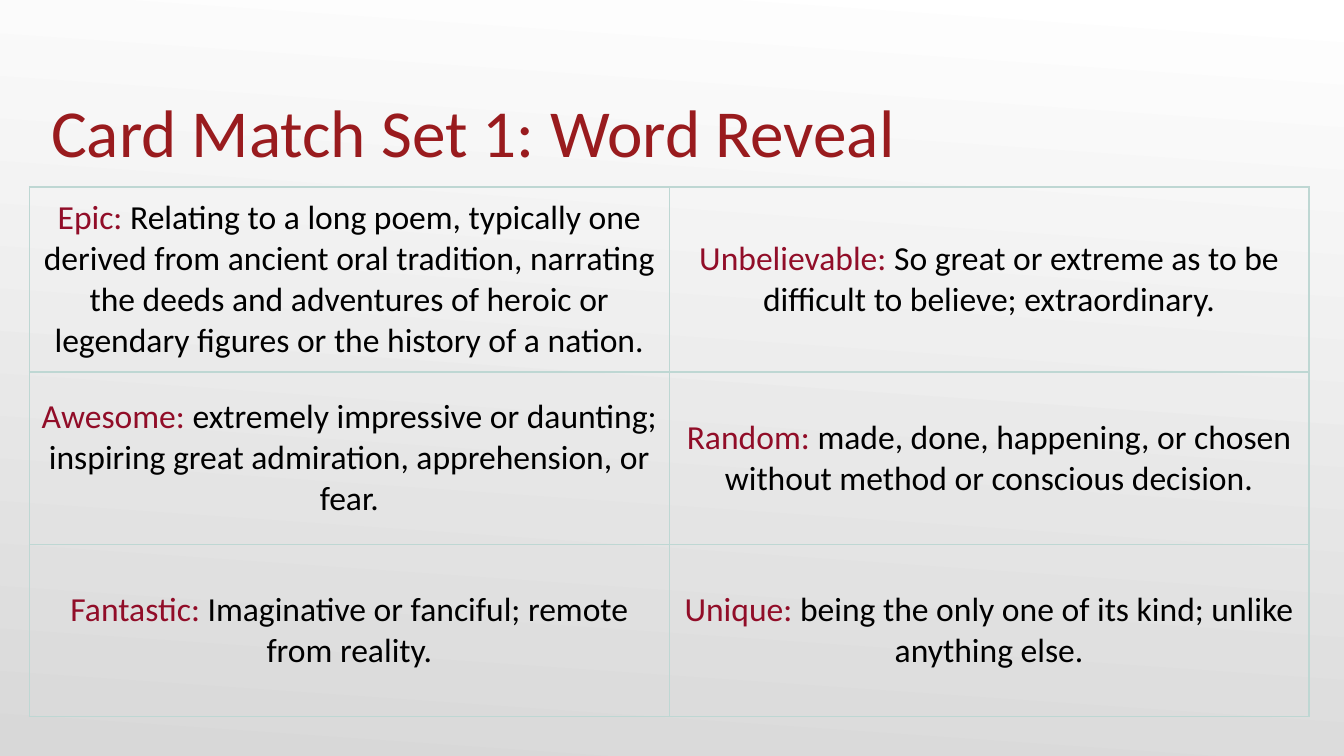
from dataclasses import dataclass

from lxml.etree import SubElement
from pptx import Presentation
from pptx.dml.color import RGBColor
from pptx.enum.text import MSO_ANCHOR, PP_ALIGN
from pptx.oxml.ns import qn
from pptx.util import Inches, Pt


@dataclass(frozen=True)
class Theme:
    font: str = "Calibri"
    title_size: int = 36
    body_size: int = 18
    title: str = "991B1E"
    term: str = "910D28"
    text: str = "000000"
    border: str = "BED7D3"
    border_width: int = 1
    bg_top: str = "FFFFFF"
    bg_bottom: str = "D8D8D8"


THEME = Theme()

# Each card is a term and its definition
CARDS = [
    [("Epic: ", "Relating to a long poem, typically one derived from ancient oral "
      "tradition, narrating the deeds and adventures of heroic or legendary "
      "figures or the history of a nation."),
     ("Unbelievable: ", "So great or extreme as to be difficult to believe; "
      "extraordinary.")],
    [("Awesome: ", "extremely impressive or daunting; inspiring great admiration, "
      "apprehension, or fear."),
     ("Random: ", "made, done, happening, or chosen without method or conscious "
      "decision.")],
    [("Fantastic: ", "Imaginative or fanciful; remote from reality."),
     ("Unique:", " being the only one of its kind; unlike anything else.")],
]
ROW_HEIGHTS = [1.38, 1.28, 1.28]
COL_WIDTH = 4.76


def add_run(p, text, *, size=THEME.body_size, color=THEME.text):
    r = p.add_run()
    r.text = text
    r.font.name = THEME.font
    r.font.size = Pt(size)
    r.font.color.rgb = RGBColor.from_string(color)


def set_background(s):
    fill = s.background.fill
    fill.gradient()
    fill.gradient_angle = 266
    for stop, color in zip(fill.gradient_stops, (THEME.bg_top, THEME.bg_bottom)):
        stop.color.rgb = RGBColor.from_string(color)


def add_title(s, text):
    sp = s.shapes.add_textbox(Inches(0.38), Inches(0.33), Inches(9), Inches(0.94))
    tf = sp.text_frame
    tf.word_wrap = True
    tf.vertical_anchor = MSO_ANCHOR.BOTTOM
    tf.margin_left = tf.margin_right = tf.margin_bottom = 0
    tf.margin_top = Inches(0.05)
    add_run(tf.paragraphs[0], text, size=THEME.title_size, color=THEME.title)


def set_borders(cell):
    tc_pr = cell._tc.get_or_add_tcPr()
    for side in ("a:lnL", "a:lnR", "a:lnT", "a:lnB"):
        ln = SubElement(tc_pr, qn(side), w=str(Pt(THEME.border_width)))
        solid = SubElement(ln, qn("a:solidFill"))
        SubElement(solid, qn("a:srgbClr"), val=THEME.border)


def fill_card(cell, term, definition):
    set_borders(cell)
    cell.fill.background()
    cell.vertical_anchor = MSO_ANCHOR.MIDDLE
    cell.margin_left = cell.margin_right = Inches(0.08)
    cell.margin_top = cell.margin_bottom = Inches(0.08)
    p = cell.text_frame.paragraphs[0]
    p.alignment = PP_ALIGN.CENTER
    add_run(p, term, color=THEME.term)
    add_run(p, definition)


def add_cards(s, cards):
    n_cols = len(cards[0])
    table = s.shapes.add_table(
        len(cards), n_cols, Inches(0.22), Inches(1.39),
        Inches(COL_WIDTH * n_cols), Inches(sum(ROW_HEIGHTS))).table
    table.first_row = table.horz_banding = False
    for col in table.columns:
        col.width = Inches(COL_WIDTH)
    for i, (height, row) in enumerate(zip(ROW_HEIGHTS, cards)):
        table.rows[i].height = Inches(height)
        for j, (term, definition) in enumerate(row):
            fill_card(table.cell(i, j), term, definition)


def main():
    # Widescreen 16:9 page
    prs = Presentation()
    prs.slide_width, prs.slide_height = Inches(10), Inches(10 * 9 / 16)
    s = prs.slides.add_slide(prs.slide_layouts[6])

    # Backdrop, heading and card grid
    set_background(s)
    add_title(s, "Card Match Set 1: Word Reveal")
    add_cards(s, CARDS)

    prs.save("out.pptx")


if __name__ == "__main__":
    main()
